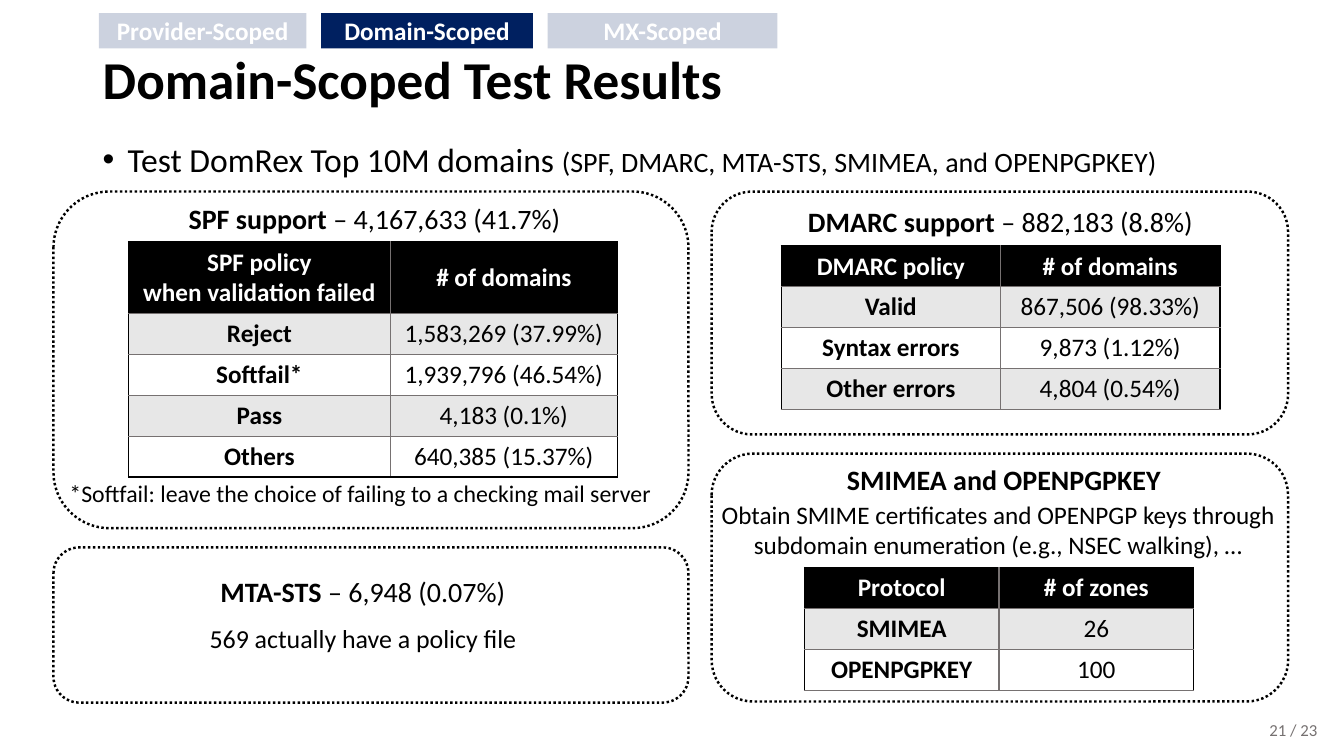
"""Build the slide of domain-scoped test results."""
import pptx
import pptx.dml.color
import pptx.enum.dml
import pptx.enum.shapes
import pptx.enum.text
import pptx.oxml
import pptx.oxml.ns
import pptx.util
from lxml import etree

Pt = pptx.util.Pt
RGB = pptx.dml.color.RGBColor
ALIGN = pptx.enum.text.PP_ALIGN
ANCHOR = pptx.enum.text.MSO_ANCHOR
SHAPE = pptx.enum.shapes.MSO_SHAPE
qn = pptx.oxml.ns.qn

BLACK = RGB(0x00, 0x00, 0x00)
WHITE = RGB(0xFF, 0xFF, 0xFF)
BAND = RGB(0xE7, 0xE7, 0xE7)
GREY = RGB(0x76, 0x71, 0x71)
NAVY = RGB(0x00, 0x20, 0x60)

TITLE = "Domain-Scoped Test Results"
TITLE_BOX = (66.2, 26.6, 828, 64)
TABS = [("Provider-Scoped", 148.3, False),
        ("Domain-Scoped", 151.2, True),
        ("MX-Scoped", 164.2, False)]
TAB_LEFT, TAB_TOP, TAB_HEIGHT, TAB_GAP = 70.6, 9.4, 25.2, 10.5

PANELS = [(38.2, 136.8, 453.6, 240.5), (508.3, 136.8, 411.8, 173.5),
          (38.2, 391, 453.6, 110.9), (508.3, 324, 411.8, 177.1)]

HEADING = dict(alignment=ALIGN.CENTER, line_spacing=0.9, space_before=Pt(10))
BULLET = dict(line_spacing=0.9, space_before=Pt(10))
CENTER = dict(alignment=ALIGN.CENTER)
RIGHT = dict(alignment=ALIGN.RIGHT)
TOP, MIDDLE = ANCHOR.TOP, ANCHOR.MIDDLE

INTRO = ((66.2, 98.6, 828, 37.4),
         [("Test DomRex Top 10M domains ", 24, False),
          ("(SPF, DMARC, MTA-STS, SMIMEA, and OPENPGPKEY)", 20, False)],
         BULLET, TOP, BLACK)
TEXTS = [
    ((106.6, 143.3, 321.8, 36),
     [("SPF support ", 20, True), ("– 4,167,633 (41.7%)", 20, False)],
     HEADING, TOP, BLACK),
    ((558, 145.4, 313.2, 36),
     [("DMARC support ", 20, True), ("– 882,183 (8.8%)", 20, False)],
     HEADING, TOP, BLACK),
    ((42.5, 338.4, 445, 28),
     [("*Softfail: leave the choice of failing to a checking mail server", 17, False)],
     {}, TOP, BLACK),
    ((136.1, 409.7, 246.2, 36),
     [("MTA-STS ", 20, True), ("– 6,948 (0.07%)", 20, False)],
     HEADING, TOP, BLACK),
    ((136.1, 439.2, 246.2, 36),
     [("569 actually have a policy file", 18.5, False)], HEADING, MIDDLE, BLACK),
    ((570.2, 326.2, 293.8, 36),
     [("SMIMEA and OPENPGPKEY", 20, True)], HEADING, MIDDLE, BLACK),
    ((501.8, 352.8, 422.6, 51),
     [("Obtain SMIME certificates and OPENPGP keys through "
       "subdomain enumeration (e.g., NSEC walking), …", 18, False)],
     CENTER, TOP, BLACK),
    ((732.2, 506.9, 216, 28.8), [("21 / 23", 12, False)], RIGHT, MIDDLE, GREY),
]

ROW_HEIGHT, LINE_HEIGHT = 29.2, 22
TABLES = [
    ((91.7, 172.8), (187.2, 162), BLACK,
     [("SPF policy\nwhen validation failed", "# of domains"),
      ("Reject", "1,583,269 (37.99%)"),
      ("Softfail*", "1,939,796 (46.54%)"),
      ("Pass", "4,183 (0.1%)"),
      ("Others", "640,385 (15.37%)")]),
    ((558, 175.7), (156.7, 156.7), GREY,
     [("DMARC policy", "# of domains"),
      ("Valid", "867,506 (98.33%)"),
      ("Syntax errors", "9,873 (1.12%)"),
      ("Other errors", "4,804 (0.54%)")]),
    ((574.6, 405.4), (139, 139), GREY,
     [("Protocol", "# of zones"),
      ("SMIMEA", "26"),
      ("OPENPGPKEY", "100")]),
]


def apply(target, values):
    for name, value in values.items():
        setattr(target, name, value)


def write(p, runs, color, layout):
    apply(p, layout)
    for text, size, bold in runs:
        r = p.add_run()
        r.text = text
        apply(r.font, dict(name="Calibri", size=Pt(size), bold=bold))
        r.font.color.rgb = color


def add_text(s, box, runs, layout, anchor, color):
    tf = s.shapes.add_textbox(*map(Pt, box)).text_frame
    apply(tf, dict(word_wrap=True, vertical_anchor=anchor))
    write(tf.paragraphs[0], runs, color, layout)
    return tf.paragraphs[0]


def add_bullet(p):
    pPr = p._p.get_or_add_pPr()
    pPr.set("marL", str(Pt(18)))
    pPr.set("indent", str(-Pt(18)))
    etree.SubElement(pPr, qn("a:buFont")).set("typeface", "Arial")
    etree.SubElement(pPr, qn("a:buChar")).set("char", "•")


def set_borders(cell, colors):
    tcPr = cell._tc.get_or_add_tcPr()
    for i, (side, color) in enumerate(zip("LRTB", colors)):
        ln = etree.Element(qn("a:ln" + side), w=str(Pt(1)))
        fill = etree.SubElement(ln, qn("a:solidFill"))
        etree.SubElement(fill, qn("a:srgbClr")).set("val", str(color))
        tcPr.insert(i, ln)


def add_table(s, corner, widths, bottom, rows):
    heights = [ROW_HEIGHT + LINE_HEIGHT * row[0].count("\n") for row in rows]
    size = (sum(widths), sum(heights))
    table = s.shapes.add_table(len(rows), len(widths), *map(Pt, corner + size)).table
    for column, width in zip(table.columns, widths):
        column.width = Pt(width)
    for i, row in enumerate(rows):
        table.rows[i].height = Pt(heights[i])
        for j, text in enumerate(row):
            cell = table.cell(i, j)
            cell.vertical_anchor = MIDDLE
            cell.fill.solid()
            cell.fill.fore_color.rgb = BLACK if i == 0 else BAND if i % 2 else WHITE
            set_borders(cell, (BLACK if j == 0 else GREY,
                               BLACK if j == len(widths) - 1 else GREY,
                               BLACK if i == 0 else GREY,
                               bottom if i == len(rows) - 1 else GREY))
            tf = cell.text_frame
            for k, line in enumerate(text.split("\n")):
                p = tf.add_paragraph() if k else tf.paragraphs[0]
                write(p, [(line, 18, i == 0 or j == 0)], BLACK if i else WHITE, CENTER)


def add_panel(s, box):
    sp = s.shapes.add_shape(SHAPE.ROUNDED_RECTANGLE, *map(Pt, box))
    sp.shadow.inherit = False
    sp.fill.background()
    sp.line.color.rgb = BLACK
    apply(sp.line, dict(width=Pt(1.75), dash_style=pptx.enum.dml.MSO_LINE.ROUND_DOT))


def add_tab(s, left, width, text, active):
    sp = s.shapes.add_shape(SHAPE.RECTANGLE, *map(Pt, (left, TAB_TOP, width, TAB_HEIGHT)))
    sp.shadow.inherit = False
    sp.line.fill.background()
    sp.fill.solid()
    sp.fill.fore_color.rgb = NAVY
    if not active:
        color = sp._element.spPr.find(qn("a:solidFill")).find(qn("a:srgbClr"))
        etree.SubElement(color, qn("a:alpha")).set("val", "20000")
    sp.text_frame.vertical_anchor = MIDDLE
    write(sp.text_frame.paragraphs[0], [(text, 18, True)], WHITE, CENTER)


def main():
    prs = pptx.Presentation()
    apply(prs, dict(slide_width=Pt(960), slide_height=Pt(540)))
    s = prs.slides.add_slide(prs.slide_layouts[5])
    title = s.shapes.title
    apply(title, dict(zip(("left", "top", "width", "height"), map(Pt, TITLE_BOX))))
    apply(title.text_frame, dict(vertical_anchor=MIDDLE, word_wrap=True,
                                 auto_size=pptx.enum.text.MSO_AUTO_SIZE.NONE))
    write(title.text_frame.paragraphs[0], [(TITLE, 38, True)], BLACK,
          dict(alignment=ALIGN.LEFT, line_spacing=0.9))
    add_bullet(add_text(s, *INTRO))
    for panel in PANELS:
        add_panel(s, panel)
    for table in TABLES:
        add_table(s, *table)
    for text in TEXTS:
        add_text(s, *text)
    left = TAB_LEFT
    for text, width, active in TABS:
        add_tab(s, left, width, text, active)
        left += width + TAB_GAP
    prs.save("out.pptx")


if __name__ == "__main__":
    main()
